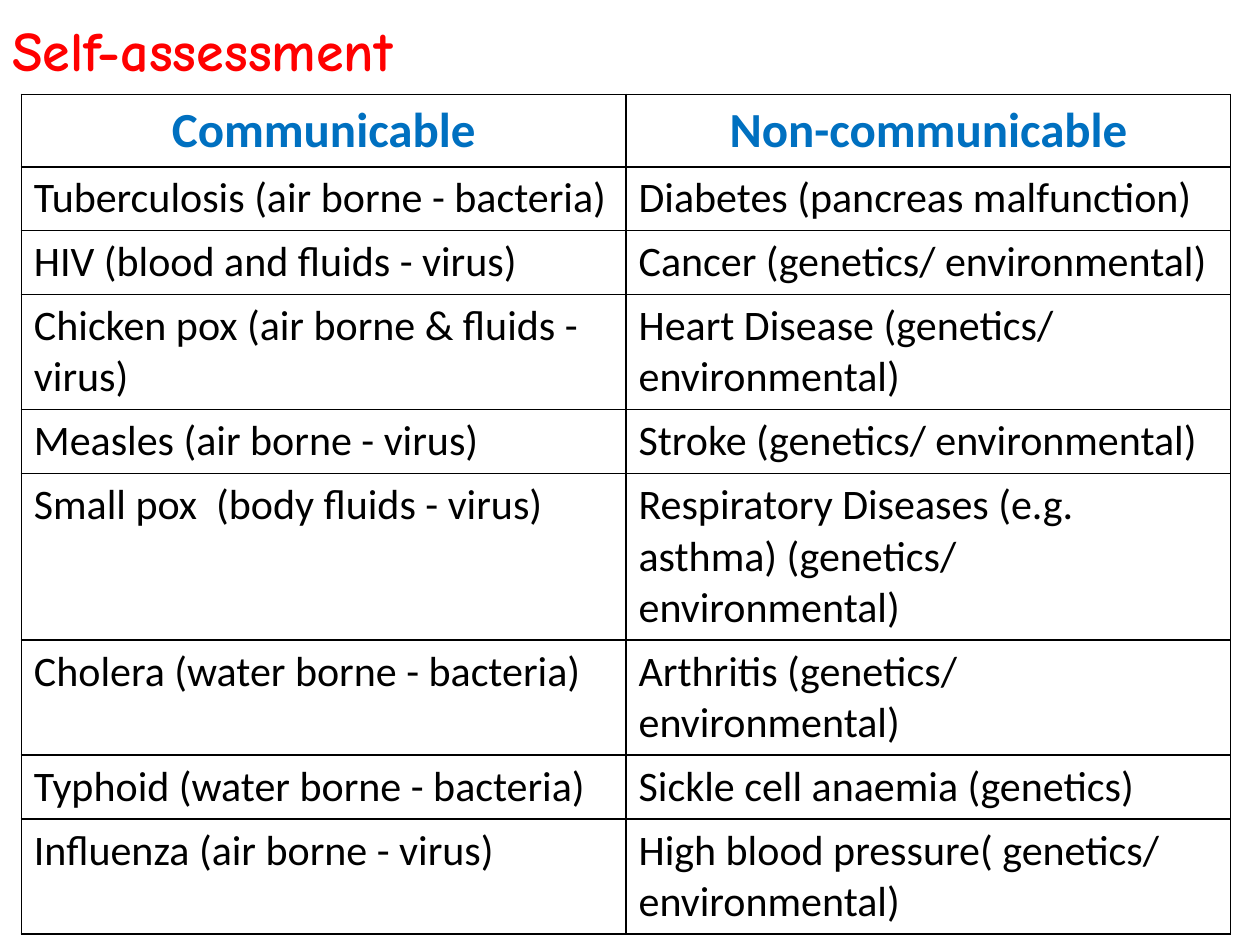
from lxml.etree import SubElement
from pptx import Presentation
from pptx.dml.color import RGBColor
from pptx.enum.text import MSO_AUTO_SIZE, PP_ALIGN
from pptx.oxml.ns import qn
from pptx.util import Cm, Pt

BLACK = RGBColor(0x00, 0x00, 0x00)
BLUE = RGBColor(0x00, 0x70, 0xC0)
RED = RGBColor(0xFF, 0x00, 0x00)
WHITE = RGBColor(0xFF, 0xFF, 0xFF)

TITLE = dict(name="Comic Neue", size=Pt(32), bold=True, color=RED)
HEADER = dict(name="Calibri", size=Pt(28), bold=True, color=BLUE)
BODY = dict(name="Calibri", size=Pt(24), bold=False, color=BLACK)

LINE_HEIGHTS = {1: 1.27, 2: 2.29, 3: 3.3}
HEADER_HEIGHT = 1.45
DISEASES = [
    (1, "Tuberculosis (air borne - bacteria)", "Diabetes (pancreas malfunction)"),
    (1, "HIV (blood and fluids - virus)", "Cancer (genetics/ environmental)"),
    (2, "Chicken pox (air borne & fluids - virus)", "Heart Disease (genetics/ environmental)"),
    (1, "Measles (air borne - virus)", "Stroke (genetics/ environmental)"),
    (3, "Small pox  (body fluids - virus)",
     "Respiratory Diseases (e.g. asthma) (genetics/ environmental)"),
    (2, "Cholera (water borne - bacteria)", "Arthritis (genetics/ environmental)"),
    (1, "Typhoid (water borne - bacteria)", "Sickle cell anaemia (genetics)"),
    (2, "Influenza (air borne - virus)", "High blood pressure( genetics/ environmental)"),
]


def write(tf, text, fmt, align=PP_ALIGN.LEFT):
    """Put one formatted run into a text frame."""
    p = tf.paragraphs[0]
    p.alignment = align
    r = p.add_run()
    r.text = text
    for key, value in fmt.items():
        if key == "color":
            r.font.color.rgb = value
        else:
            setattr(r.font, key, value)


def style_cell(cell):
    """Give a cell a white fill and thin black borders."""
    tcPr = cell._tc.get_or_add_tcPr()
    for side in ("lnL", "lnR", "lnT", "lnB"):
        ln = SubElement(tcPr, qn(f"a:{side}"), w=str(Pt(1)))
        fill = SubElement(ln, qn("a:solidFill"))
        SubElement(fill, qn("a:srgbClr"), val=str(BLACK))
    cell.fill.solid()
    cell.fill.fore_color.rgb = WHITE


def add_title(s, x, y, w, h):
    """Place the slide title in the given box."""
    tf = s.shapes.add_textbox(Cm(x), Cm(y), Cm(w), Cm(h)).text_frame
    tf.word_wrap = True
    tf.auto_size = MSO_AUTO_SIZE.SHAPE_TO_FIT_TEXT
    write(tf, "Self-assessment", TITLE)


def add_disease_table(s, x, y, w):
    """Place the two-column disease table at the given corner and width."""
    heights = [HEADER_HEIGHT] + [LINE_HEIGHTS[lines] for lines, *_ in DISEASES]
    rows = [("Communicable", "Non-communicable")] + [names for _, *names in DISEASES]
    table = s.shapes.add_table(
        len(rows), 2, Cm(x), Cm(y), Cm(w), Cm(sum(heights))).table
    for column in table.columns:
        column.width = Cm(w / 2)
    for i, (height, names) in enumerate(zip(heights, rows)):
        table.rows[i].height = Cm(height)
        fmt, align = (BODY, PP_ALIGN.LEFT) if i else (HEADER, PP_ALIGN.CENTER)
        for j, name in enumerate(names):
            cell = table.cell(i, j)
            style_cell(cell)
            write(cell.text_frame, name, fmt, align)


def main():
    """Build and save the slide."""
    prs = Presentation()
    prs.slide_width, prs.slide_height = Cm(25.4), Cm(19.05)
    s = prs.slides.add_slide(prs.slide_layouts[6])
    add_disease_table(s, 0.43, 1.9, 24.38)
    add_title(s, 0, 0.18, 9.88, 1.63)
    prs.save("out.pptx")


if __name__ == "__main__":
    main()
